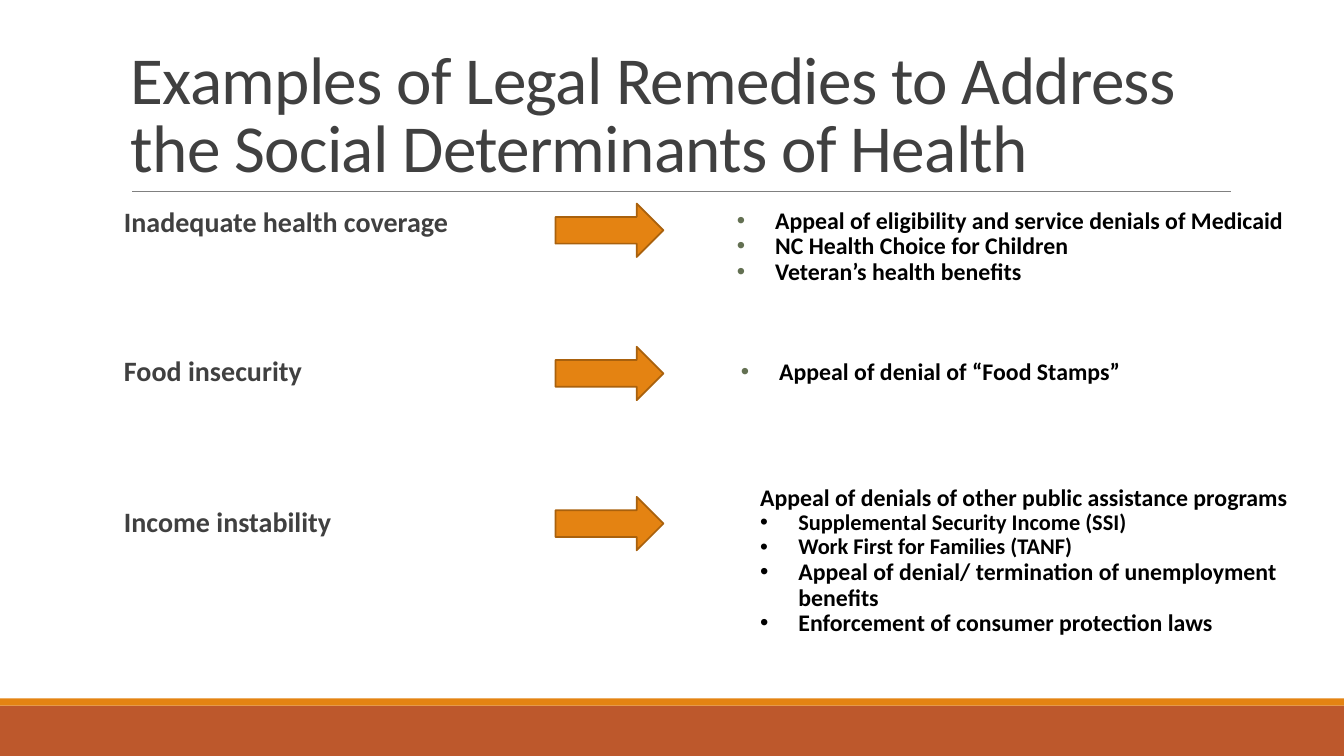
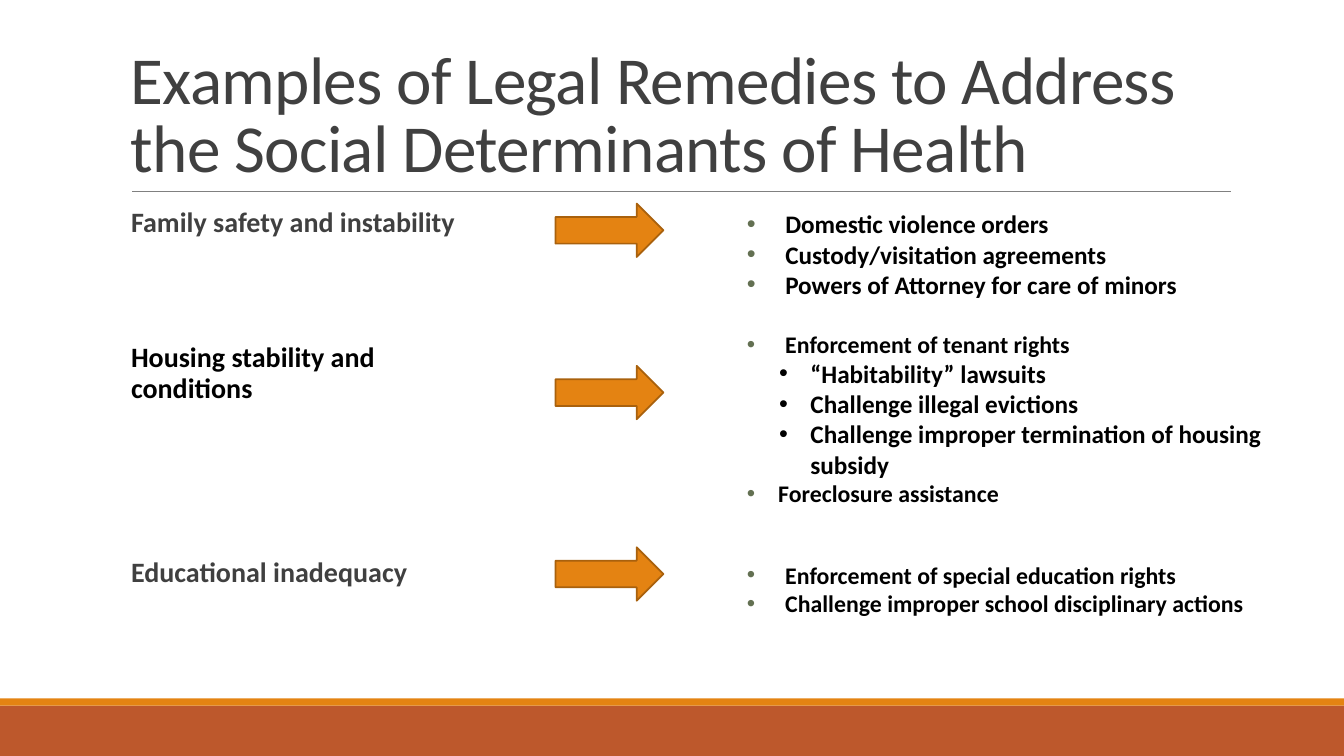
from dataclasses import dataclass

import lxml.etree
import pptx
import pptx.dml.color
import pptx.enum.shapes
import pptx.enum.text
import pptx.oxml.ns
import pptx.util
from pptx.util import Inches, Pt

COLORS = {
    "band": "BD582C",
    "accent": "E48312",
    "arrow_line": "A9610D",
    "rule": "808080",
    "heading": "404040",
    "text": "000000",
    "bullet": "637052",
}
FONT = "Calibri"
TITLE = "Examples of Legal Remedies to Address the Social Determinants of Health"


@dataclass
class Line:
    text: str
    size: int = 17
    margin: float = 0.38
    hanging: float = 0.38
    bullet_color: str | None = "bullet"
    bulleted: bool = True


@dataclass
class Remedies:
    left: float
    top: float
    width: float
    height: float
    lines: list[Line]


@dataclass
class Need:
    label: str
    label_top: float
    arrow_top: float
    remedies: Remedies
    label_color: str = "heading"


@dataclass
class Page:
    label_left: float
    line_spacing: float
    needs: list[Need]


def program(text: str, size: int = 17) -> Line:
    """A black-bulleted line under an assistance heading."""
    return Line(text, size, margin=0.7, bullet_color=None)


def housing_action(text: str) -> Line:
    """A black-bulleted line under tenant rights."""
    return Line(text, 18, margin=0.63, hanging=0.31, bullet_color=None)


PAGES = [
    Page(1.23, 0.9, [
        Need("Inadequate health coverage", 2.02, 2.02, Remedies(7.21, 2.02, 5.75, 0.87, [
            Line("Appeal of eligibility and service denials of Medicaid"),
            Line("NC Health Choice for Children"),
            Line("Veteran’s health benefits"),
        ])),
        Need("Food insecurity", 3.5, 3.44, Remedies(7.25, 3.52, 3.98, 0.36, [
            Line("Appeal of denial of “Food Stamps”"),
        ])),
        Need("Income instability", 4.99, 4.93, Remedies(7.12, 4.77, 6.02, 1.62, [
            Line("Appeal of denials of other public assistance programs",
                 margin=0.32, hanging=0, bulleted=False),
            program("Supplemental Security Income (SSI)", 16),
            program("Work First for Families (TANF)", 16),
            program("Appeal of denial/ termination of unemployment benefits"),
            program("Enforcement of consumer protection laws"),
        ])),
    ]),
    Page(1.3, 1.0, [
        Need("Family safety and instability", 2.02, 2.02, Remedies(7.31, 2.02, 4.48, 1.01, [
            Line("Domestic violence orders", 18),
            Line("Custody/visitation agreements", 18),
            Line("Powers of Attorney for care of minors", 18),
        ])),
        Need("Housing stability and conditions", 3.36, 3.63, Remedies(7.31, 3.22, 5.46, 1.88, [
            Line("Enforcement of tenant rights"),
            housing_action("“Habitability” lawsuits"),
            housing_action("Challenge illegal evictions"),
            housing_action("Challenge improper termination of housing subsidy"),
            Line("Foreclosure assistance", margin=0.31, hanging=0.31),
        ]), "text"),
        Need("Educational inadequacy", 5.49, 5.43, Remedies(7.31, 5.51, 5.36, 0.67, [
            Line("Enforcement of special education rights"),
            Line("Challenge improper school disciplinary actions"),
        ])),
    ]),
]


def rgb(name: str) -> pptx.dml.color.RGBColor:
    return pptx.dml.color.RGBColor.from_string(COLORS[name])


def add_block(slide, kind, left: float, top: float, width: float, height: float,
              fill: str, outline: str | None = None):
    """Add a filled preset shape, outlined only if a colour is named."""
    shape = slide.shapes.add_shape(
        kind, Inches(left), Inches(top), Inches(width), Inches(height))
    shape.shadow.inherit = False
    shape.fill.solid()
    shape.fill.fore_color.rgb = rgb(fill)
    if outline:
        shape.line.color.rgb = rgb(outline)
        shape.line.width = Pt(1.25)
    else:
        shape.line.fill.background()
    return shape


def add_text_frame(slide, left: float, top: float, width: float, height: float):
    box = slide.shapes.add_textbox(Inches(left), Inches(top), Inches(width), Inches(height))
    box.text_frame.word_wrap = True
    return box.text_frame


def style(paragraph, size: int, color: str, line_spacing: float, bold: bool = True) -> None:
    paragraph.line_spacing = line_spacing
    paragraph.font.name = FONT
    paragraph.font.size = Pt(size)
    paragraph.font.bold = bold
    paragraph.font.color.rgb = rgb(color)


def indent(paragraph, line: Line) -> None:
    """Set the paragraph's margin, hanging indent and bullet."""
    properties = paragraph._p.get_or_add_pPr()
    properties.set("marL", str(Inches(line.margin)))
    properties.set("indent", str(-Inches(line.hanging)))
    if not line.bulleted:
        return
    qn = pptx.oxml.ns.qn
    bullet_parts = []
    if line.bullet_color:
        color = lxml.etree.Element(qn("a:buClr"))
        lxml.etree.SubElement(color, qn("a:srgbClr"), val=COLORS[line.bullet_color])
        bullet_parts.append(color)
    bullet_parts.append(lxml.etree.Element(qn("a:buFont"), typeface="Arial"))
    bullet_parts.append(lxml.etree.Element(qn("a:buChar"), char="•"))
    default_font = properties.find(qn("a:defRPr"))
    for part in bullet_parts:
        default_font.addprevious(part)


def add_frame(slide) -> None:
    """Add the bands, title and rule that every slide shares."""
    rectangle = pptx.enum.shapes.MSO_SHAPE.RECTANGLE
    add_block(slide, rectangle, 0, 7, 13.33, 0.5, "band")
    add_block(slide, rectangle, 0, 6.93, 13.33, 0.07, "accent")
    rule = slide.shapes.add_connector(
        pptx.enum.shapes.MSO_CONNECTOR.STRAIGHT,
        Inches(1.31), Inches(1.9), Inches(12.21), Inches(1.9))
    rule.line.color.rgb = rgb("rule")
    rule.line.width = Pt(0.5)
    lxml.etree.SubElement(rule._element.spPr, pptx.oxml.ns.qn("a:effectLst"))

    frame = add_text_frame(slide, 1.2, 0.31, 11, 1.59)
    frame.vertical_anchor = pptx.enum.text.MSO_ANCHOR.BOTTOM
    paragraph = frame.paragraphs[0]
    run = paragraph.add_run()
    run.text = TITLE
    run._r.get_or_add_rPr().set("spc", "-50")
    style(paragraph, 48, "heading", 0.85, bold=False)


def add_need(slide, need: Need, page: Page) -> None:
    """Add one row: label, arrow and remedies."""
    label = add_text_frame(slide, page.label_left, need.label_top, 3.53, 0.71)
    label.margin_left = label.margin_right = 0
    label.text = need.label
    style(label.paragraphs[0], 20, need.label_color, 0.9)

    add_block(slide, pptx.enum.shapes.MSO_SHAPE.RIGHT_ARROW,
              5.51, need.arrow_top, 1.07, 0.53, "accent", "arrow_line")

    remedies = need.remedies
    frame = add_text_frame(slide, remedies.left, remedies.top, remedies.width, remedies.height)
    frame.text = "\n".join(line.text for line in remedies.lines)
    for paragraph, line in zip(frame.paragraphs, remedies.lines):
        style(paragraph, line.size, "text", page.line_spacing)
        indent(paragraph, line)


def main() -> None:
    presentation = pptx.Presentation()
    presentation.slide_width = Inches(13.33)
    presentation.slide_height = Inches(7.5)
    for page in PAGES:
        slide = presentation.slides.add_slide(presentation.slide_layouts[6])
        add_frame(slide)
        for need in page.needs:
            add_need(slide, need, page)
    presentation.save("out.pptx")


if __name__ == "__main__":
    main()
